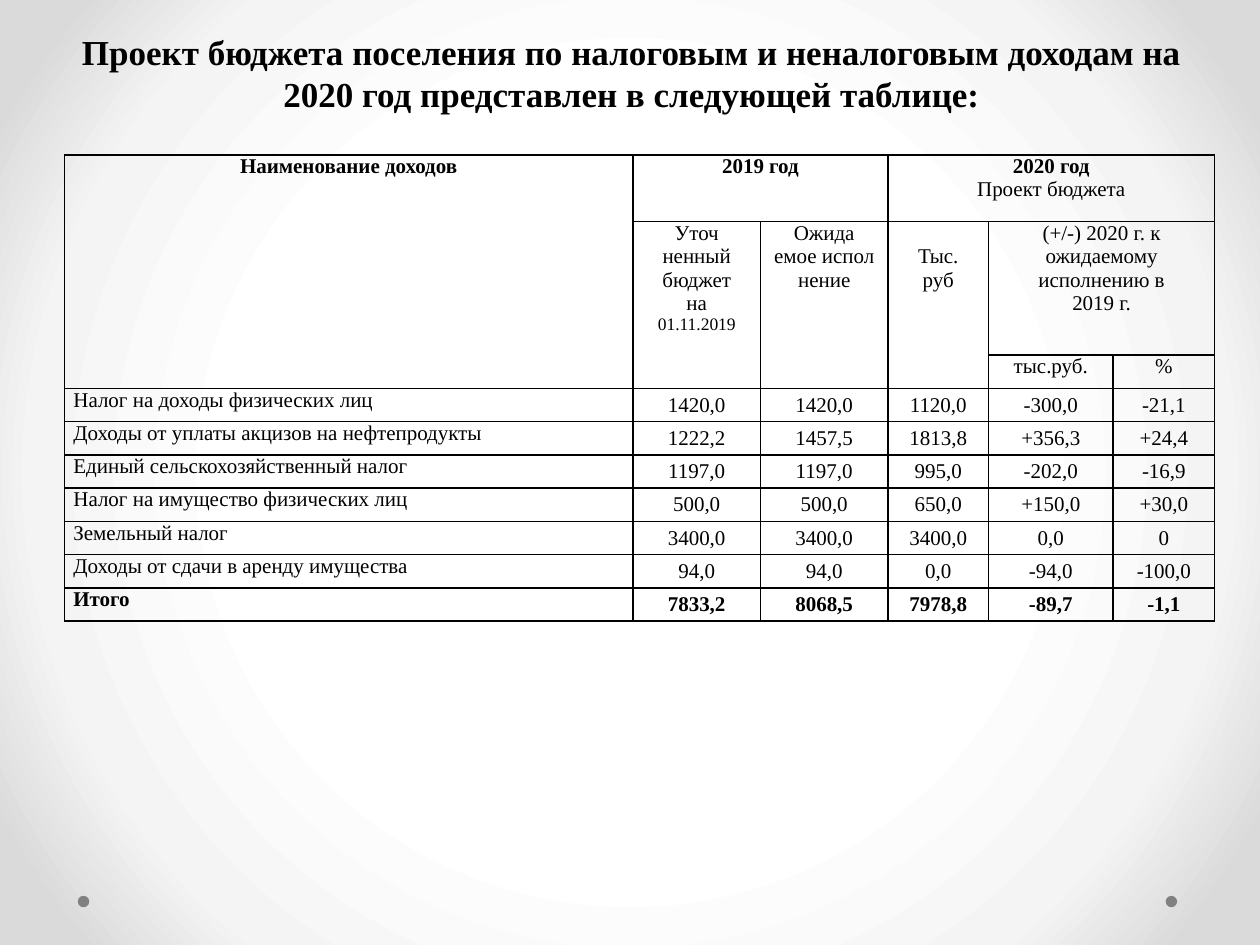
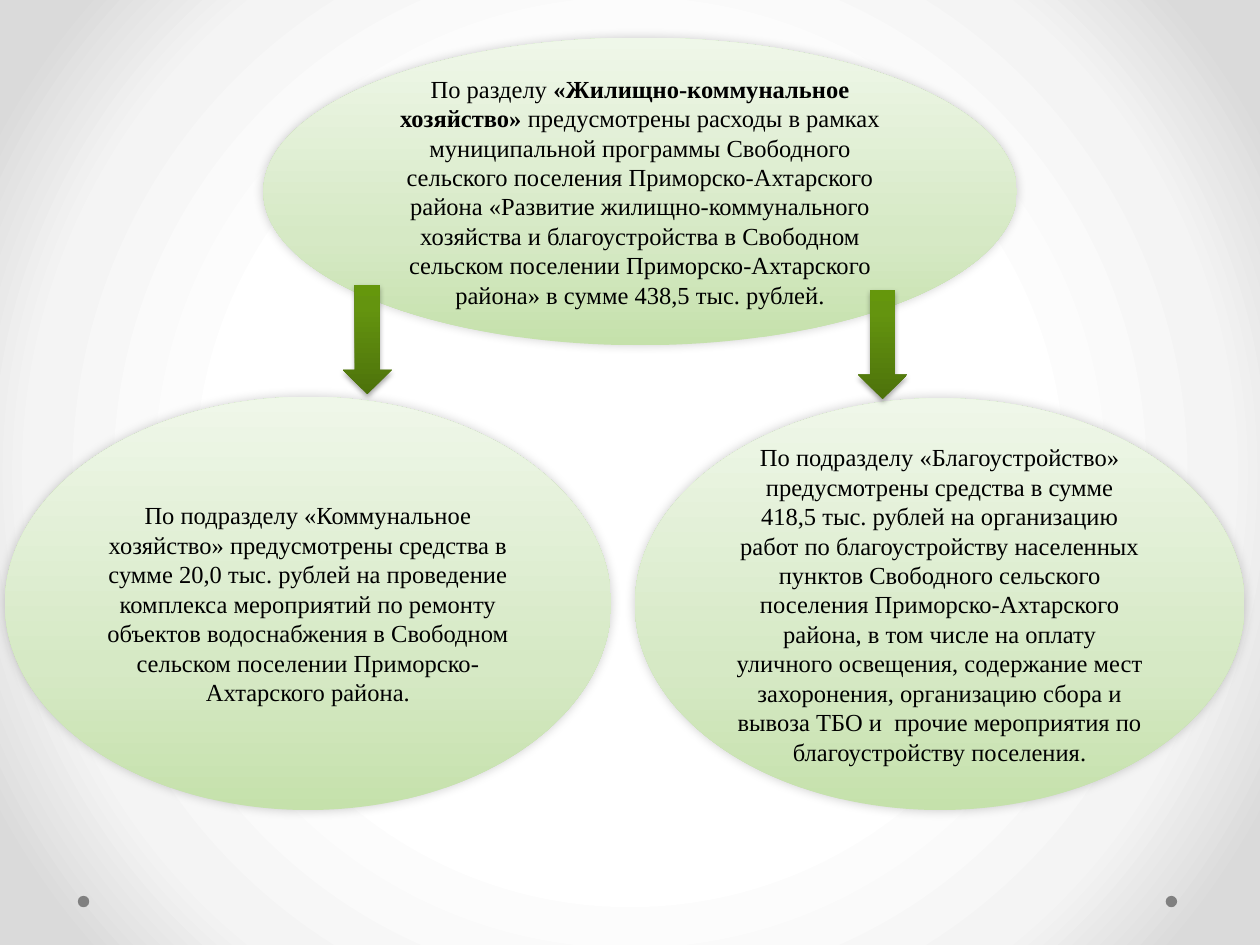
import dataclasses
import pptx
import pptx.dml.color
import pptx.enum.shapes
import pptx.enum.text
import pptx.oxml
import pptx.oxml.ns
import pptx.util
from pptx.util import Cm, Pt

SHAPE = pptx.enum.shapes.MSO_SHAPE
ALIGN = pptx.enum.text.PP_ALIGN
ANCHOR = pptx.enum.text.MSO_ANCHOR
NS = pptx.oxml.ns.nsdecls("a")


@dataclasses.dataclass(frozen=True)
class Theme:
    font: str = "Times New Roman"
    text: str = "000000"
    border: str = "000000"
    dot: str = "808080"
    # gradients: (position in percent, colour)
    backdrop: tuple = ((50, "FFFFFF"), (76, "F4F4F4"), (92, "DADADA"))
    bubble: tuple = ((0, "C5E1AB"), (35, "D6E9C5"), (100, "EFF7E9"))
    arrow: tuple = ((0, "4D720B"), (80, "64940F"), (100, "65970C"))
    # shadows: opacity in percent, blur and distance in points, angle
    bubble_shadow: tuple = (20, 6, 0, 225)
    arrow_shadow: tuple = (35, 3.1, 1.8, 90)
    title_size: float = 20
    body_size: float = 14
    table_size: float = 12
    small_size: float = 10
    border_width: float = 1


THEME = Theme()
UPWARD = '<a:lin ang="16200000" scaled="0"/>'
FROM_CENTRE = ('<a:path path="circle"><a:fillToRect l="50000" t="50000" '
               'r="50000" b="50000"/></a:path>')

TITLE = ("Проект бюджета поселения по налоговым и неналоговым доходам на "
         "2020 год представлен в следующей таблице:")

COL_WIDTHS = (11.46, 2.57, 2.57, 2.03, 2.51, 2.05)
ROW_HEIGHTS = (1.35, 2.69) + (0.67,) * 8

# (row, column, rows spanned, columns spanned, paragraphs as (text, bold, size))
HEADERS = (
    (0, 0, 3, 1, [("Наименование доходов", True, THEME.table_size)]),
    (0, 1, 1, 2, [("2019 год", True, THEME.table_size)]),
    (0, 3, 1, 3, [("2020 год", True, THEME.table_size),
                  ("Проект бюджета", False, THEME.table_size)]),
    (1, 1, 2, 1, [("Уточ", False, THEME.table_size),
                  ("ненный бюджет", False, THEME.table_size),
                  ("на", False, THEME.table_size),
                  ("01.11.2019", False, THEME.small_size)]),
    (1, 2, 2, 1, [("Ожида", False, THEME.table_size),
                  ("емое испол", False, THEME.table_size),
                  ("нение", False, THEME.table_size)]),
    (1, 3, 2, 1, [("Тыс.", False, THEME.table_size),
                  ("руб", False, THEME.table_size)]),
    (1, 4, 1, 2, [("(+/-) 2020 г. к ожидаемому", False, THEME.table_size),
                  ("исполнению в", False, THEME.table_size),
                  ("2019 г.", False, THEME.table_size)]),
    (2, 4, 1, 1, [("тыс.руб.", False, THEME.table_size)]),
    (2, 5, 1, 1, [("%", False, THEME.table_size)]),
)

INCOME = (
    ("Налог на доходы физических лиц",
     "1420,0", "1420,0", "1120,0", "-300,0", "-21,1"),
    ("Доходы от уплаты акцизов на нефтепродукты",
     "1222,2", "1457,5", "1813,8", "+356,3", "+24,4"),
    ("Единый сельскохозяйственный налог",
     "1197,0", "1197,0", "995,0", "-202,0", "-16,9"),
    ("Налог на имущество физических лиц",
     "500,0", "500,0", "650,0", "+150,0", "+30,0"),
    ("Земельный налог", "3400,0", "3400,0", "3400,0", "0,0", "0"),
    ("Доходы от сдачи в аренду имущества",
     "94,0", "94,0", "0,0", "-94,0", "-100,0"),
    ("Итого", "7833,2", "8068,5", "7978,8", "-89,7", "-1,1"),
)

# (left, top, width, height) in cm, then runs as (text, bold)
BUBBLES = (
    ((5.31, 0.76, 15.19, 6.2), [
        ("По разделу ", False),
        ("«Жилищно-коммунальное хозяйство» ", True),
        ("предусмотрены расходы в рамках муниципальной программы Свободного "
         "сельского поселения Приморско-Ахтарского района «Развитие "
         "жилищно-коммунального хозяйства и благоустройства в Свободном "
         "сельском поселении Приморско-Ахтарского района» в сумме "
         "438,5 тыс. рублей.", False)]),
    ((0.1, 8, 12.22, 8.33), [
        ("По подразделу «Коммунальное хозяйство» предусмотрены средства в "
         "сумме 20,0 тыс. рублей на проведение комплекса мероприятий по "
         "ремонту объектов водоснабжения в Свободном сельском поселении "
         "Приморско-Ахтарского района.", False)]),
    ((12.8, 8.03, 12.29, 8.3), [
        ("По подразделу «Благоустройство» предусмотрены средства в сумме "
         "418,5 тыс. рублей на организацию работ по благоустройству "
         "населенных пунктов Свободного сельского поселения "
         "Приморско-Ахтарского района, в том числе на оплату уличного "
         "освещения, содержание мест захоронения, организацию сбора и вывоза "
         "ТБО и  прочие мероприятия по благоустройству поселения.", False)]),
)
ARROWS = ((6.91, 5.74), (17.3, 5.84))
ARROW_SIZE = (0.99, 2.21)


def rgb(colour):
    return pptx.dml.color.RGBColor.from_string(colour)


def set_gradient(fill, owner, stops, direction):
    """Fill owner, the XML parent of fill, with a gradient of any number of stops."""
    fill.solid()
    marks = "".join(f'<a:gs pos="{pos * 1000}"><a:srgbClr val="{colour}"/></a:gs>'
                    for pos, colour in stops)
    gradient = pptx.oxml.parse_xml(
        f'<a:gradFill {NS} rotWithShape="1"><a:gsLst>{marks}</a:gsLst>'
        f'{direction}</a:gradFill>')
    owner.replace(owner.find(pptx.oxml.ns.qn("a:solidFill")), gradient)


def set_shadow(sp, opacity, blur, distance, angle):
    sp.shadow.inherit = False
    effects = sp.element.spPr.find(pptx.oxml.ns.qn("a:effectLst"))
    effects.append(pptx.oxml.parse_xml(
        f'<a:outerShdw {NS} blurRad="{Pt(blur)}" dist="{Pt(distance)}" '
        f'dir="{angle * 60000}" rotWithShape="0"><a:srgbClr val="000000">'
        f'<a:alpha val="{opacity * 1000}"/></a:srgbClr></a:outerShdw>'))


def add_run(p, text, size, bold=False):
    r = p.add_run()
    r.text = text
    r.font.name = THEME.font
    r.font.size = Pt(size)
    r.font.bold = bold
    r.font.color.rgb = rgb(THEME.text)


def add_glossy_shape(s, kind, box, stops, shadow):
    sp = s.shapes.add_shape(kind, *map(Cm, box))
    set_gradient(sp.fill, sp.element.spPr, stops, UPWARD)
    sp.line.fill.background()
    set_shadow(sp, *shadow)
    return sp


def set_backdrop(prs):
    master = prs.slide_master
    fill = master.background.fill
    fill.solid()
    owner = master.element.xpath("p:cSld/p:bg/p:bgPr")[0]
    set_gradient(fill, owner, THEME.backdrop, FROM_CENTRE)


def add_slide(prs, layout):
    """Add a slide with the two dots that every slide carries at its foot."""
    s = prs.slides.add_slide(prs.slide_layouts.get_by_name(layout))
    for left in (1.57, 23.5):
        dot = s.shapes.add_shape(SHAPE.OVAL, Cm(left), Cm(18.06), Cm(0.23), Cm(0.23))
        dot.fill.solid()
        dot.fill.fore_color.rgb = rgb(THEME.dot)
        dot.line.fill.background()
        dot.shadow.inherit = False
    return s


def set_title(s, text, box):
    title = s.shapes.title
    title.left, title.top, title.width, title.height = map(Cm, box)
    tf = title.text_frame
    tf.word_wrap = True
    tf.auto_size = pptx.enum.text.MSO_AUTO_SIZE.NONE
    tf.vertical_anchor = ANCHOR.BOTTOM
    p = tf.paragraphs[0]
    p.alignment = ALIGN.CENTER
    add_run(p, text, THEME.title_size, True)


def style_cell(cell):
    cell.margin_left = cell.margin_right = Cm(0.18)
    cell.margin_top = cell.margin_bottom = 0
    tc_pr = cell._tc.get_or_add_tcPr()
    for side in "LRTB":
        tc_pr.append(pptx.oxml.parse_xml(
            f'<a:ln{side} {NS} w="{Pt(THEME.border_width)}"><a:solidFill>'
            f'<a:srgbClr val="{THEME.border}"/></a:solidFill></a:ln{side}>'))
    cell.fill.background()


def fill_cell(cell, paragraphs, align=ALIGN.CENTER, anchor=ANCHOR.TOP):
    cell.vertical_anchor = anchor
    tf = cell.text_frame
    for i, (text, bold, size) in enumerate(paragraphs):
        p = tf.add_paragraph() if i else tf.paragraphs[0]
        p.alignment = align
        add_run(p, text, size, bold)


def add_income_table(s, left, top):
    frame = s.shapes.add_table(len(ROW_HEIGHTS), len(COL_WIDTHS), Cm(left), Cm(top),
                               Cm(sum(COL_WIDTHS)), Cm(sum(ROW_HEIGHTS)))
    table = frame.table
    table.first_row = table.horz_banding = False
    for column, width in zip(table.columns, COL_WIDTHS):
        column.width = Cm(width)
    for row, height in zip(table.rows, ROW_HEIGHTS):
        row.height = Cm(height)
    for cell in table.iter_cells():
        style_cell(cell)

    for row, col, rows, cols, paragraphs in HEADERS:
        cell = table.cell(row, col)
        if rows * cols > 1:
            cell.merge(table.cell(row + rows - 1, col + cols - 1))
        fill_cell(cell, paragraphs)
    table.cell(1, 3).margin_top = Cm(0.47)

    for row, (name, *values) in enumerate(INCOME, start=3):
        bold = row == len(ROW_HEIGHTS) - 1
        fill_cell(table.cell(row, 0), [(name, bold, THEME.table_size)], ALIGN.LEFT)
        for col, value in enumerate(values, start=1):
            fill_cell(table.cell(row, col), [(value, bold, THEME.table_size)],
                      anchor=ANCHOR.MIDDLE)


def add_bubble(s, box, runs):
    sp = add_glossy_shape(s, SHAPE.OVAL, box, THEME.bubble, THEME.bubble_shadow)
    tf = sp.text_frame
    tf.word_wrap = True
    tf.vertical_anchor = ANCHOR.MIDDLE
    p = tf.paragraphs[0]
    p.alignment = ALIGN.CENTER
    for text, bold in runs:
        add_run(p, text, THEME.body_size, bold)


def add_spending_diagram(s, left, top):
    for (x, y, width, height), runs in BUBBLES:
        add_bubble(s, (left + x, top + y, width, height), runs)
    for x, y in ARROWS:
        add_glossy_shape(s, SHAPE.DOWN_ARROW, (left + x, top + y, *ARROW_SIZE),
                         THEME.arrow, THEME.arrow_shadow)


def main():
    prs = pptx.Presentation()
    prs.slide_width, prs.slide_height = Cm(25.4), Cm(19.05)
    set_backdrop(prs)

    s = add_slide(prs, "Title Only")
    set_title(s, TITLE, (1.3, 0.91, 22.86, 1.52))
    add_income_table(s, 1.3, 3.12)

    s = add_slide(prs, "Blank")
    add_spending_diagram(s, 0, 0)
    prs.save("out.pptx")


if __name__ == "__main__":
    main()
